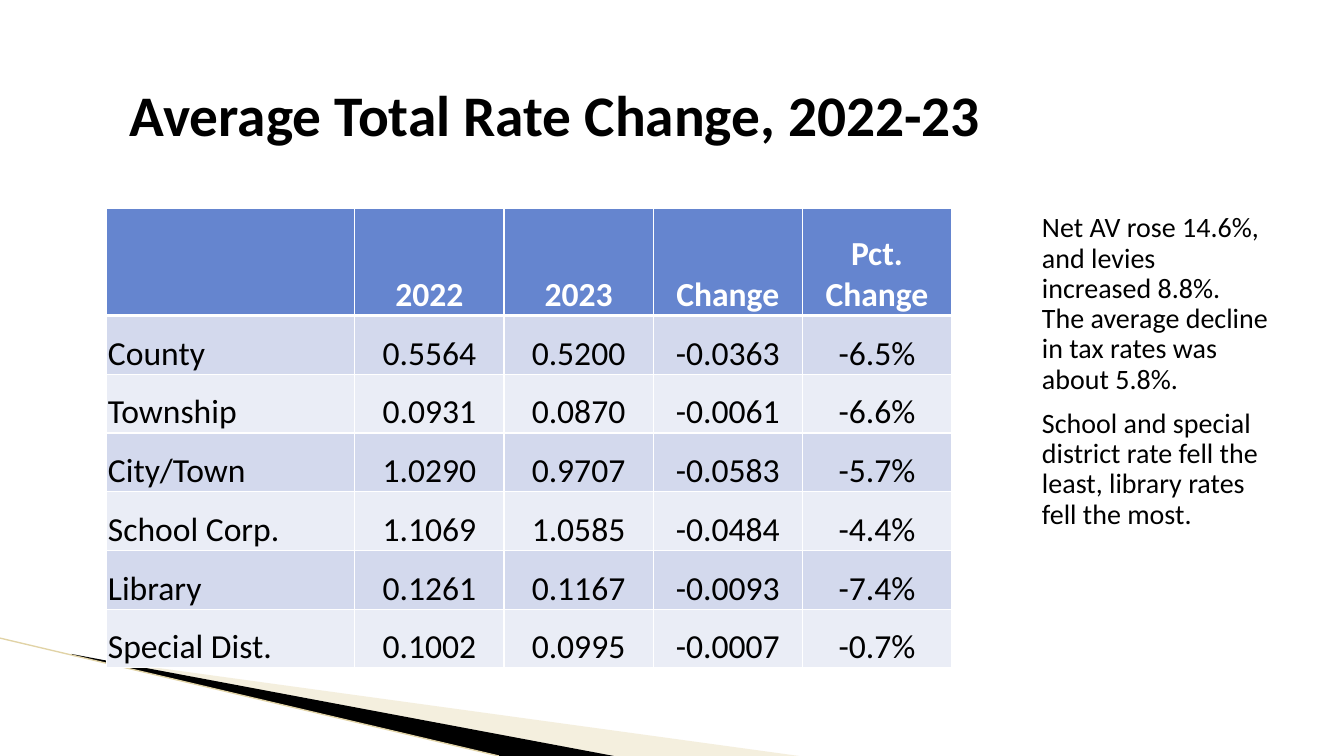
from dataclasses import dataclass

from lxml.etree import SubElement
from pptx import Presentation
from pptx.dml.color import RGBColor
from pptx.enum.shapes import MSO_CONNECTOR
from pptx.enum.text import MSO_ANCHOR, MSO_AUTO_SIZE, PP_ALIGN
from pptx.oxml.ns import qn
from pptx.util import Cm, Pt


@dataclass(frozen=True)
class Theme:
    font: str = "Calibri"
    black: str = "000000"
    white: str = "FFFFFF"
    header: str = "6585CF"
    bands: tuple = ("D3D9ED", "EAEDF6")
    cream: str = "E4D7AD"
    edge: str = "E1D3A6"
    title_size: int = 41
    table_size: int = 24
    body_size: int = 20


def write(para, text, size, color, font, bold=False, align=PP_ALIGN.LEFT,
          spacing=None, before=0):
    span = para.add_run()
    span.text = text
    span.font.name = font
    span.font.size = Pt(size)
    span.font.bold = bold
    span.font.color.rgb = RGBColor.from_string(color)
    para.alignment = align
    para.space_before = Pt(before)
    if spacing:
        para.line_spacing = spacing


def draw_borders(cell, color, **widths):
    properties = cell._tc.get_or_add_tcPr()
    for index, side in enumerate(("L", "R", "T", "B")):
        width = Pt(widths.get(side, 1))
        line = properties.makeelement(qn(f"a:ln{side}"), {"w": str(width)})
        fill = SubElement(line, qn("a:solidFill"))
        SubElement(fill, qn("a:srgbClr"), val=color)
        properties.insert(index, line)


class PageBuilder:
    def __init__(self, page, theme):
        self.page = page
        self.theme = theme

    def wedge(self, points, color, opacity=100):
        corners = [(Cm(x), Cm(y)) for x, y in points]
        builder = self.page.shapes.build_freeform(*corners[0])
        builder.add_line_segments(corners[1:], close=True)
        shape = builder.convert_to_shape()
        shape.shadow.inherit = False
        shape.line.fill.background()
        shape.fill.solid()
        shape.fill.fore_color.rgb = RGBColor.from_string(color)
        if opacity < 100:
            tone = shape._element.spPr.find(f".//{qn('a:srgbClr')}")
            SubElement(tone, qn("a:alpha"), val=str(opacity * 1000))

    def line(self, start, end, color, width):
        ends = [Cm(value) for value in (*start, *end)]
        line = self.page.shapes.add_connector(MSO_CONNECTOR.STRAIGHT, *ends)
        line.line.color.rgb = RGBColor.from_string(color)
        line.line.width = Pt(width)
        SubElement(line._element.spPr, qn("a:effectLst"))

    def title(self, text, left, top, width, height):
        box = self.page.shapes.title
        box.left, box.top, box.width, box.height = map(Cm, (left, top, width, height))
        frame = box.text_frame
        frame.word_wrap = True
        frame.auto_size = MSO_AUTO_SIZE.NONE
        frame.vertical_anchor = MSO_ANCHOR.MIDDLE
        write(frame.paragraphs[0], text, self.theme.title_size, self.theme.black,
              self.theme.font, bold=True, align=PP_ALIGN.CENTER)

    def text_box(self, texts, left, top, width, height):
        box = self.page.shapes.add_textbox(*map(Cm, (left, top, width, height)))
        frame = box.text_frame
        frame.word_wrap = True
        for index, text in enumerate(texts):
            para = frame.add_paragraph() if index else frame.paragraphs[0]
            write(para, text, self.theme.body_size, self.theme.black,
                  self.theme.font, spacing=0.9, before=10 if index else 0)

    def table(self, rows, left, top, widths, heights):
        table = self.page.shapes.add_table(
            len(rows), len(widths), Cm(left), Cm(top),
            Cm(sum(widths)), Cm(sum(heights))).table
        for column, width in zip(table.columns, widths):
            column.width = Cm(width)
        for row, height in zip(table.rows, heights):
            row.height = Cm(height)
        for row_index, values in enumerate(rows):
            for column_index, text in enumerate(values):
                self.table_cell(table.cell(row_index, column_index), text,
                                row_index, column_index)

    def table_cell(self, cell, text, row_index, column_index):
        theme = self.theme
        is_header = row_index == 0
        fill = theme.header if is_header else theme.bands[(row_index - 1) % 2]
        cell.fill.solid()
        cell.fill.fore_color.rgb = RGBColor.from_string(fill)
        cell.margin_left = cell.margin_right = cell.margin_top = Cm(0.03)
        cell.margin_bottom = 0
        cell.vertical_anchor = MSO_ANCHOR.BOTTOM
        draw_borders(cell, theme.white, B=3 if is_header else 1,
                     T=3 if row_index == 1 else 1)
        if text:
            write(cell.text_frame.paragraphs[0], text, theme.table_size,
                  theme.white if is_header else theme.black, theme.font,
                  bold=is_header,
                  align=PP_ALIGN.CENTER if column_index else PP_ALIGN.LEFT)


RATES = [
    ("", "2022", "2023", "Change", "Pct. Change"),
    ("County", "0.5564", "0.5200", "-0.0363", "-6.5%"),
    ("Township", "0.0931", "0.0870", "-0.0061", "-6.6%"),
    ("City/Town", "1.0290", "0.9707", "-0.0583", "-5.7%"),
    ("School Corp.", "1.1069", "1.0585", "-0.0484", "-4.4%"),
    ("Library", "0.1261", "0.1167", "-0.0093", "-7.4%"),
    ("Special Dist.", "0.1002", "0.0995", "-0.0007", "-0.7%"),
]
FINDINGS = [
    "Net AV rose 14.6%, and levies increased 8.8%.  "
    "The average decline in tax rates was about 5.8%.",
    "School and special district rate fell the least, library rates fell the most.",
]


def main():
    deck = Presentation()
    deck.slide_width, deck.slide_height = Cm(33.87), Cm(19.05)
    theme = Theme()
    builder = PageBuilder(deck.slides.add_slide(deck.slide_layouts[5]), theme)
    builder.wedge([(1.85, 16.54), (20.14, 19.05), (15.44, 19.05), (1.85, 16.51)],
                  theme.cream, opacity=40)
    builder.wedge([(1.8, 16.48), (15.47, 19.05), (12.6, 19.05), (1.83, 16.51)],
                  theme.black)
    builder.line((0, 16.08), (12.57, 19.05), theme.edge, 0.95)
    builder.table(RATES, 2.69, 5.26, [6.25] + [3.76] * 4, [2.69] + [1.48] * 6)
    builder.title("Average Total Rate Change, 2022-23", 2.29, 1.02, 23.42, 3.68)
    builder.text_box(FINDINGS, 26.01, 5.26, 6.25, 11.58)
    deck.save("out.pptx")


if __name__ == "__main__":
    main()
